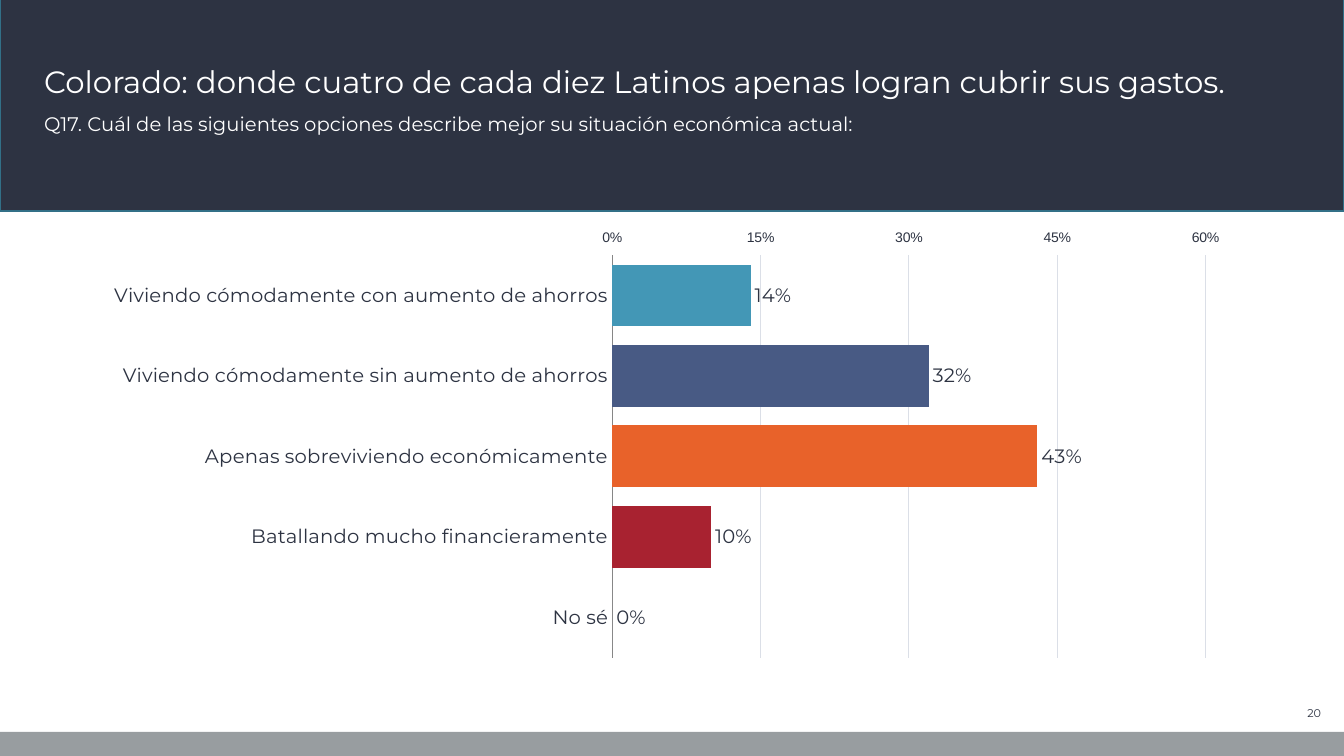
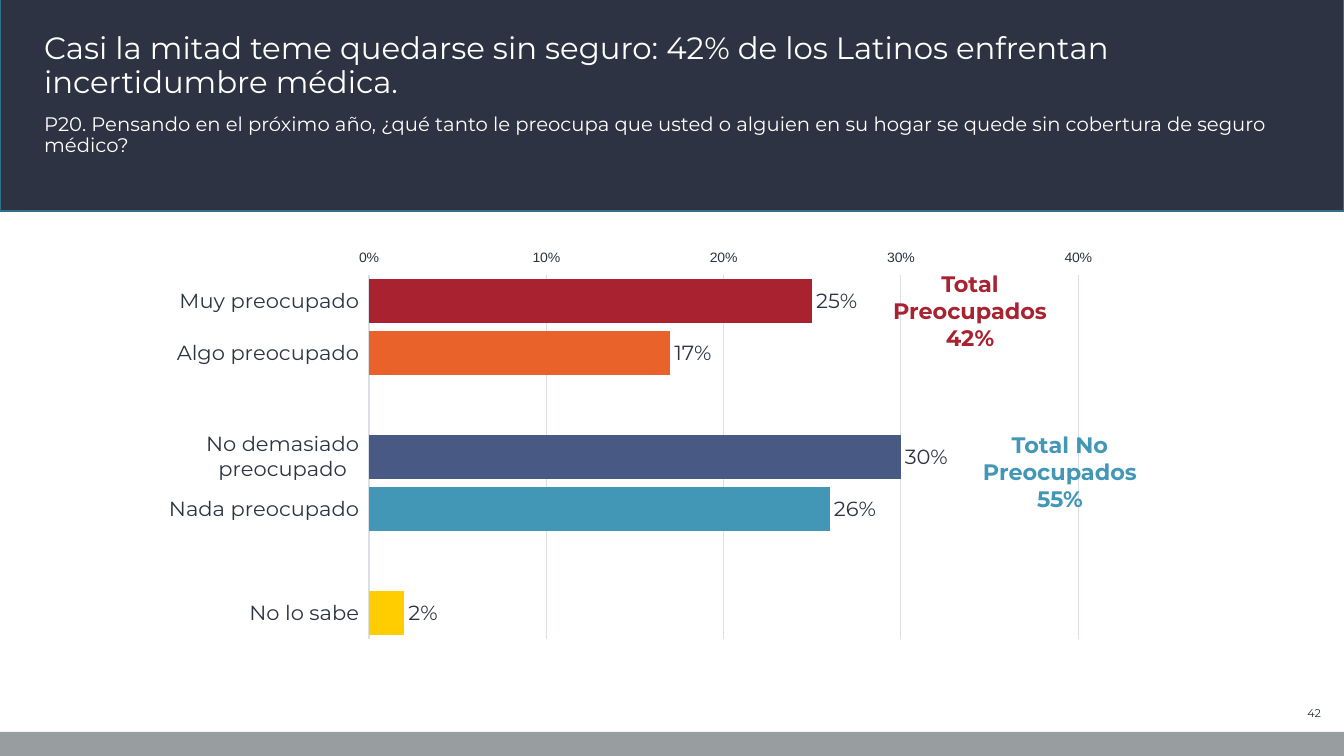
from dataclasses import dataclass

from lxml import etree
from pptx import Presentation
from pptx.chart.data import CategoryChartData
from pptx.dml.color import RGBColor
from pptx.enum.chart import (XL_AXIS_CROSSES, XL_CHART_TYPE,
                             XL_LABEL_POSITION, XL_TICK_MARK)
from pptx.enum.shapes import MSO_SHAPE
from pptx.enum.text import MSO_ANCHOR, MSO_AUTO_SIZE, PP_ALIGN
from pptx.oxml.ns import qn
from pptx.util import Pt

BAR = XL_CHART_TYPE.BAR_CLUSTERED
FAR = XL_AXIS_CROSSES.MAXIMUM
OUT_END = XL_LABEL_POSITION.OUTSIDE_END
NO_TICK, OUT_TICK = XL_TICK_MARK.NONE, XL_TICK_MARK.OUTSIDE
RECT = MSO_SHAPE.RECTANGLE
TOP, MID, LOW = MSO_ANCHOR.TOP, MSO_ANCHOR.MIDDLE, MSO_ANCHOR.BOTTOM
LEFT, CENTER, RIGHT = PP_ALIGN.LEFT, PP_ALIGN.CENTER, PP_ALIGN.RIGHT

SCALE = 914400 / 100.8  # EMU per px
WIDE, HIGH = 1344, 756


@dataclass(frozen=True)
class Theme:
    ink: str = "2D3342"
    edge: str = "327087"
    gray: str = "989DA0"
    axis: str = "868686"
    grid: str = "DBDFE7"
    white: str = "FFFFFF"
    teal: str = "4397B6"
    navy: str = "485A84"
    flame: str = "E8622A"
    red: str = "A82230"
    gold: str = "FFCD00"
    face: str = "Montserrat"
    plain: str = "Arial"
    title: int = 22
    lead: int = 14
    note: int = 16
    tick: int = 10
    page: int = 8


T = Theme()


def px(*vals):
    return [round(v * SCALE) for v in vals]


def rgb(tone):
    return RGBColor.from_string(tone)


def style(font, size, tone=T.ink, face=T.face, bold=False):
    font.size, font.name, font.bold = Pt(size), face, bold
    font.color.rgb = rgb(tone)


def place(shape, box):
    shape.left, shape.top, shape.width, shape.height = px(*box)


def write(shape, text, size, tone, align=LEFT, anchor=TOP, bold=False):
    frame = shape.text_frame
    frame.word_wrap = True
    frame.auto_size = MSO_AUTO_SIZE.NONE
    frame.vertical_anchor = anchor
    frame.text = text
    para = frame.paragraphs[0]
    para.alignment = align
    for run in para.runs:
        style(run.font, size, tone, bold=bold)
    return para


def add_text(slide, box, *args, **opts):
    write(slide.shapes.add_textbox(*px(*box)), *args, **opts)


def add_head(slide, title, lead):
    """Fill the title and the question below it."""
    main, body = slide.placeholders
    paras = [write(main, title, T.title, T.white, anchor=LOW),
             write(body, lead, T.lead, T.white)]
    props = paras[1]._p.get_or_add_pPr()
    props.set("marL", "0")
    props.set("indent", "0")
    etree.SubElement(props, qn("a:buNone"))
    for para in paras:
        para.line_spacing = 0.9
        para.space_before = Pt(0)


def set_plot(chart, area):
    """Pin the inner plot area, as shares of the chart."""
    plot = chart.element.find(qn("c:chart")).find(qn("c:plotArea"))
    for old in plot.findall(qn("c:layout")):
        plot.remove(old)
    layout = etree.Element(qn("c:layout"))
    plot.insert(0, layout)
    hold = etree.SubElement(layout, qn("c:manualLayout"))
    pairs = [("layoutTarget", "inner"), ("xMode", "edge"), ("yMode", "edge"),
             *zip("xywh", area)]
    for tag, val in pairs:
        etree.SubElement(hold, qn("c:" + tag)).set("val", str(val))


def add_bars(slide, box, rows, area, top, step, gap, size, line):
    """Draw one bar per row of (label, value, colour)."""
    data = CategoryChartData(number_format="0%")
    data.categories = [row[0] for row in rows]
    data.add_series("Series 1", [row[1] for row in rows])
    chart = slide.shapes.add_chart(BAR, *px(*box), data).chart
    chart.has_legend = chart.has_title = False
    style(chart.font, T.tick)
    set_plot(chart, area)

    # Bars and their labels
    plot = chart.plots[0]
    plot.gap_width = gap
    plot.vary_by_categories = False
    bars = plot.series[0]
    for i, (_, val, tone) in enumerate(rows):
        if val is not None:
            fill = bars.points[i].format.fill
            fill.solid()
            fill.fore_color.rgb = rgb(tone)
    marks = bars.data_labels
    marks.show_value = True
    marks.position = OUT_END
    marks.number_format, marks.number_format_is_linked = "0%", False
    style(marks.font, size)

    # Category axis
    cats = chart.category_axis
    cats.reverse_order = True
    cats.crosses = FAR
    cats.has_major_gridlines = False
    cats.major_tick_mark = NO_TICK if line else OUT_TICK
    style(cats.tick_labels.font, size)
    if line:
        cats.format.line.color.rgb = rgb(T.axis)
    else:
        cats.format.line.fill.background()

    # Value axis
    vals = chart.value_axis
    vals.minimum_scale, vals.maximum_scale, vals.major_unit = 0, top, step
    vals.major_tick_mark = OUT_TICK
    vals.format.line.fill.background()
    vals.has_major_gridlines = True
    grid = vals.major_gridlines.format.line
    grid.color.rgb, grid.width = rgb(T.grid), Pt(0.75)
    ticks = vals.tick_labels
    ticks.number_format, ticks.number_format_is_linked = "0%", False
    style(ticks.font, T.tick, face=T.plain)


def add_band(slide, layout, rank, box, tone, edge=None):
    """Make a band and hand it to the layout, behind its placeholders."""
    band = slide.shapes.add_shape(RECT, *px(*box))
    band.shadow.inherit = False
    band.fill.solid()
    band.fill.fore_color.rgb = rgb(tone)
    if edge:
        band.line.color.rgb, band.line.width = rgb(edge), Pt(1)
    else:
        band.line.fill.background()
    band.element.nvSpPr.cNvPr.set("id", str(100 + rank))
    layout.shapes.element.insert(2 + rank, band.element)


def set_layout(layout, slide):
    """Set the bands and placeholder places that all slides share."""
    add_band(slide, layout, 0, (0, -3, WIDE, 214), T.ink, T.edge)
    add_band(slide, layout, 1, (0, 732, WIDE, 24), T.gray)
    place(layout.placeholders[0], (34, 7, 1274, 98))
    place(layout.placeholders[1], (34, 109, 1274, 93))


def fill_slide(slide, page, title, lead):
    add_head(slide, title, lead)
    add_text(slide, (1252, 701, 79, 24), page, T.page, T.ink,
             align=RIGHT, anchor=MID)


def main():
    deck = Presentation()
    deck.slide_width, deck.slide_height = px(WIDE, HIGH)
    layout = deck.slide_layouts[1]
    money, cover = [deck.slides.add_slide(layout) for _ in range(2)]
    set_layout(layout, money)

    # Household finances
    fill_slide(money, "20",
               "Colorado: donde cuatro de cada diez Latinos apenas logran "
               "cubrir sus gastos.",
               "Q17. Cuál de las siguientes opciones describe mejor su "
               "situación económica actual:")
    rows = [("Viviendo cómodamente con aumento de ahorros", 0.14, T.teal),
            ("Viviendo cómodamente sin aumento de ahorros", 0.32, T.navy),
            ("Apenas sobreviviendo económicamente", 0.43, T.flame),
            ("Batallando mucho financieramente", 0.1, T.red),
            ("No sé", 0, T.gray)]
    add_bars(money, (34, 230, 1241, 455), rows, (0.466, 0.043, 0.478, 0.896),
             top=0.6, step=0.15, gap=30, size=14, line=True)

    # Fear of losing health cover
    fill_slide(cover, "42",
               "Casi la mitad teme quedarse sin seguro: 42% de los Latinos "
               "enfrentan incertidumbre médica.",
               "P20. Pensando en el próximo año, ¿qué tanto le preocupa que "
               "usted o alguien en su hogar se quede sin cobertura de seguro "
               "médico?")
    space = ("", None, None)
    rows = [("Muy preocupado", 0.25, T.red),
            ("Algo preocupado", 0.17, T.flame),
            space,
            ("No demasiado preocupado", 0.3, T.navy),
            ("Nada preocupado", 0.26, T.teal),
            space,
            ("No lo sabe", 0.02, T.gold)]
    add_bars(cover, (100, 250, 1019, 418), rows, (0.264, 0.033, 0.696, 0.896),
             top=0.4, step=0.1, gap=20, size=15, line=False)
    for left, top, text, tone in [
            (875, 265, "Total Preocupados\v42%", T.red),
            (965, 426, "Total No Preocupados\v55%", T.teal)]:
        add_text(cover, (left, top, 190, 92), text, T.note, tone,
                 align=CENTER, bold=True)

    deck.save("out.pptx")


if __name__ == "__main__":
    main()
